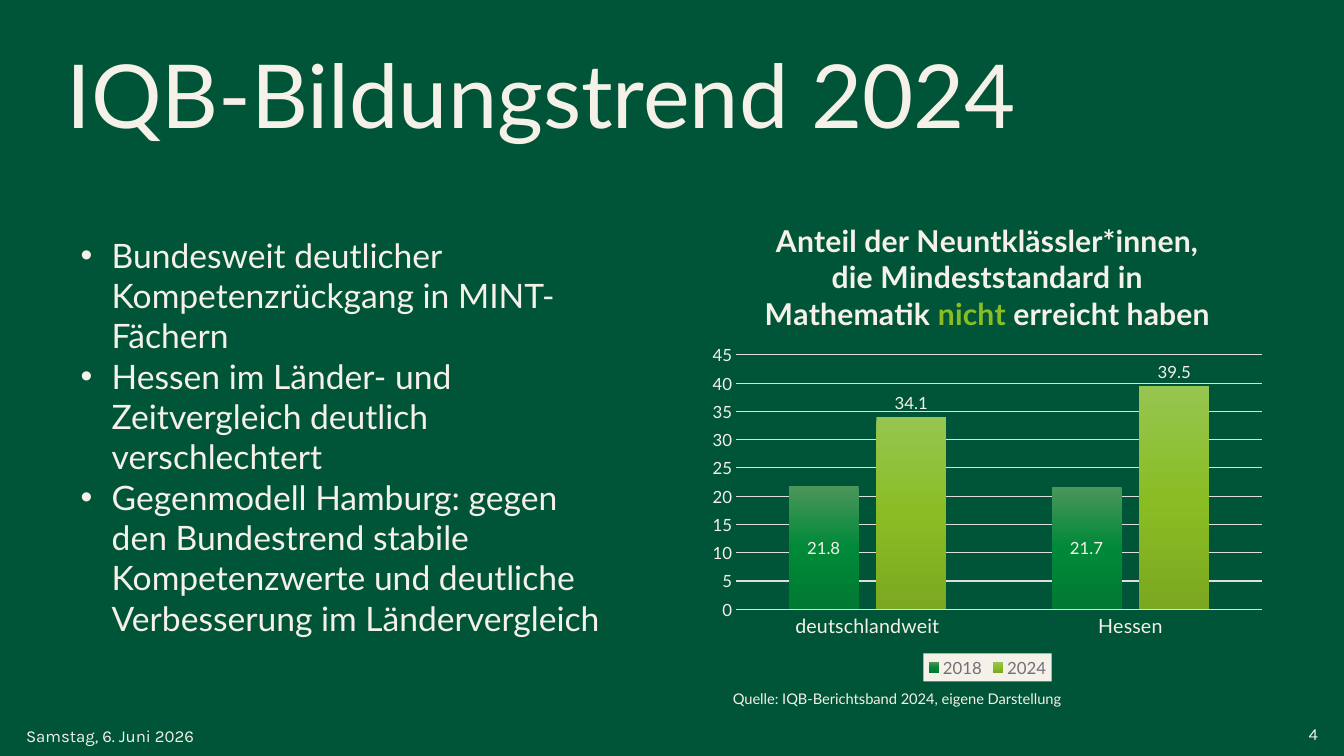
"""Build the slide on the IQB education trend 2024 with a column chart."""
from copy import deepcopy

from lxml import etree
from pptx import Presentation, util as u
from pptx.chart.data import CategoryChartData
from pptx.dml.color import RGBColor
from pptx.enum import chart as ch, text
from pptx.oxml.ns import qn

COLORS = {"green": "005538", "cream": "F5F1E9", "grid": "DEDEDF",
          "legend": "707076", "lime": "8ABD24"}
GRADIENTS = {"2018": ["4B965A", "008938", "007A32"],
             "2024": ["97C551", "8ABD24", "7BA820"]}
BULLETS = [
    "Bundesweit deutlicher Kompetenzrückgang in MINT-Fächern",
    "Hessen im Länder- und Zeitvergleich deutlich verschlechtert",
    "Gegenmodell Hamburg: gegen den Bundestrend stabile Kompetenzwerte "
    "und deutliche Verbesserung im Ländervergleich",
]


def style(font, size, color="cream", name="Lato", bold=False):
    font.size, font.name, font.bold = u.Pt(size), name, bold
    font.color.rgb = RGBColor.from_string(COLORS[color])


def add_text(box, lines, size, name="Lato", anchor=text.MSO_ANCHOR.TOP):
    tf = s.shapes.add_textbox(*map(u.Inches, box)).text_frame
    tf.word_wrap = True
    tf.vertical_anchor = anchor
    tf.text = "\n".join(lines)
    for p in tf.paragraphs:
        for r in p.runs:
            style(r.font, size, name=name)
    return tf


prs = Presentation()
prs.slide_width, prs.slide_height = u.Inches(13.33), u.Inches(7.5)
s = prs.slides.add_slide(prs.slide_layouts[6])
s.background.fill.solid()
s.background.fill.fore_color.rgb = RGBColor.from_string(COLORS["green"])

middle = text.MSO_ANCHOR.MIDDLE
title = add_text((0.56, 0.56, 11.5, 0.86), ["IQB-Bildungstrend 2024"], 63, anchor=middle)
title.paragraphs[0].line_spacing = 0.9

data = CategoryChartData()
data.categories = ["deutschlandweit", "Hessen"]
data.add_series("2018", [21.8, 21.7])
data.add_series("2024", [34.1, 39.5])
chart = s.shapes.add_chart(ch.XL_CHART_TYPE.COLUMN_CLUSTERED, u.Inches(6.96), u.Inches(2),
                           u.Inches(5.67), u.Inches(4.76), data).chart
style(chart.font, 10)

p = chart.chart_title.text_frame.paragraphs[0]
for part, color in [("Anteil der Neuntklässler*innen, die Mindeststandard in Mathematik ", "cream"),
                    ("nicht", "lime"), (" erreicht haben", "cream")]:
    r = p.add_run()
    r.text = part
    style(r.font, 21.5, color, bold=True)
chart.chart_title.include_in_layout = False

plot = chart.plots[0]
plot.gap_width, plot.overlap, plot.vary_by_categories = 150, -25, False
for series, position in zip(plot.series, [ch.XL_LABEL_POSITION.CENTER,
                                          ch.XL_LABEL_POSITION.OUTSIDE_END]):
    fill = series.format.fill
    fill.gradient()
    fill.gradient_angle = 270
    stops = series._element.find(".//" + qn("a:gsLst"))
    stops.insert(1, deepcopy(stops[0]))
    for stop, color, place in zip(fill.gradient_stops, GRADIENTS[series.name], [0, 0.5, 1]):
        stop.color.rgb = RGBColor.from_string(color)
        stop.position = place
    labels = series.data_labels
    labels.show_value = True
    labels.position = position
    style(labels.font, 12)

for axis, size in [(chart.category_axis, 14), (chart.value_axis, 12)]:
    axis.major_tick_mark = axis.minor_tick_mark = ch.XL_TICK_MARK.NONE
    style(axis.tick_labels.font, size)
grid = chart.value_axis.major_gridlines.format.line
for line, width in [(chart.category_axis.format.line, 1), (grid, 0.75)]:
    line.color.rgb = RGBColor.from_string(COLORS["grid"])
    line.width = u.Pt(width)
chart.value_axis.format.line.fill.background()
chart.value_axis.minimum_scale, chart.value_axis.maximum_scale = 0, 45
chart.value_axis.major_unit = 5

chart.has_legend = True
legend = chart.legend
legend.position = ch.XL_LEGEND_POSITION.BOTTOM
legend.include_in_layout = False
style(legend.font, 12, "legend")
sp_pr = etree.Element(qn("c:spPr"))
solid = etree.SubElement(sp_pr, qn("a:solidFill"))
etree.SubElement(solid, qn("a:srgbClr"), val=COLORS["cream"])
legend._element.find(qn("c:txPr")).addprevious(sp_pr)

plot_area = chart._chartSpace.find(".//" + qn("c:plotArea"))
for old in plot_area.findall(qn("c:layout")):
    plot_area.remove(old)
layout = etree.Element(qn("c:layout"))
manual = etree.SubElement(layout, qn("c:manualLayout"))
for tag, value in [("layoutTarget", "inner"), ("xMode", "edge"), ("yMode", "edge"),
                   ("x", "0.06"), ("y", "0.32"), ("w", "0.92"), ("h", "0.53")]:
    etree.SubElement(manual, qn("c:" + tag), val=value)
plot_area.insert(0, layout)

number = add_text((10.17, 7.08, 3, 0.4), ["4"], 12, "Karla", middle)
number.paragraphs[0].alignment = text.PP_ALIGN.RIGHT
add_text((0.16, 7.1, 3, 0.4), ["Samstag, 6. Juni 2026"], 12, "Karla", middle)

body = add_text((0.7, 2.28, 5.48, 3.74), BULLETS, 24)
body.auto_size = text.MSO_AUTO_SIZE.SHAPE_TO_FIT_TEXT
for p in body.paragraphs:
    p_pr = p._p.get_or_add_pPr()
    p_pr.set("marL", str(u.Inches(0.31)))
    p_pr.set("indent", str(-u.Inches(0.31)))
    etree.SubElement(p_pr, qn("a:buFont"), typeface="Arial")
    etree.SubElement(p_pr, qn("a:buChar"), char="•")

source = add_text((7.17, 6.78, 6.67, 0.28), ["Quelle: IQB-Berichtsband 2024, eigene Darstellung"], 10.5)
source.auto_size = text.MSO_AUTO_SIZE.SHAPE_TO_FIT_TEXT
source.paragraphs[0].line_spacing = 1.07
source.paragraphs[0].space_after = u.Pt(8)

prs.save("out.pptx")
